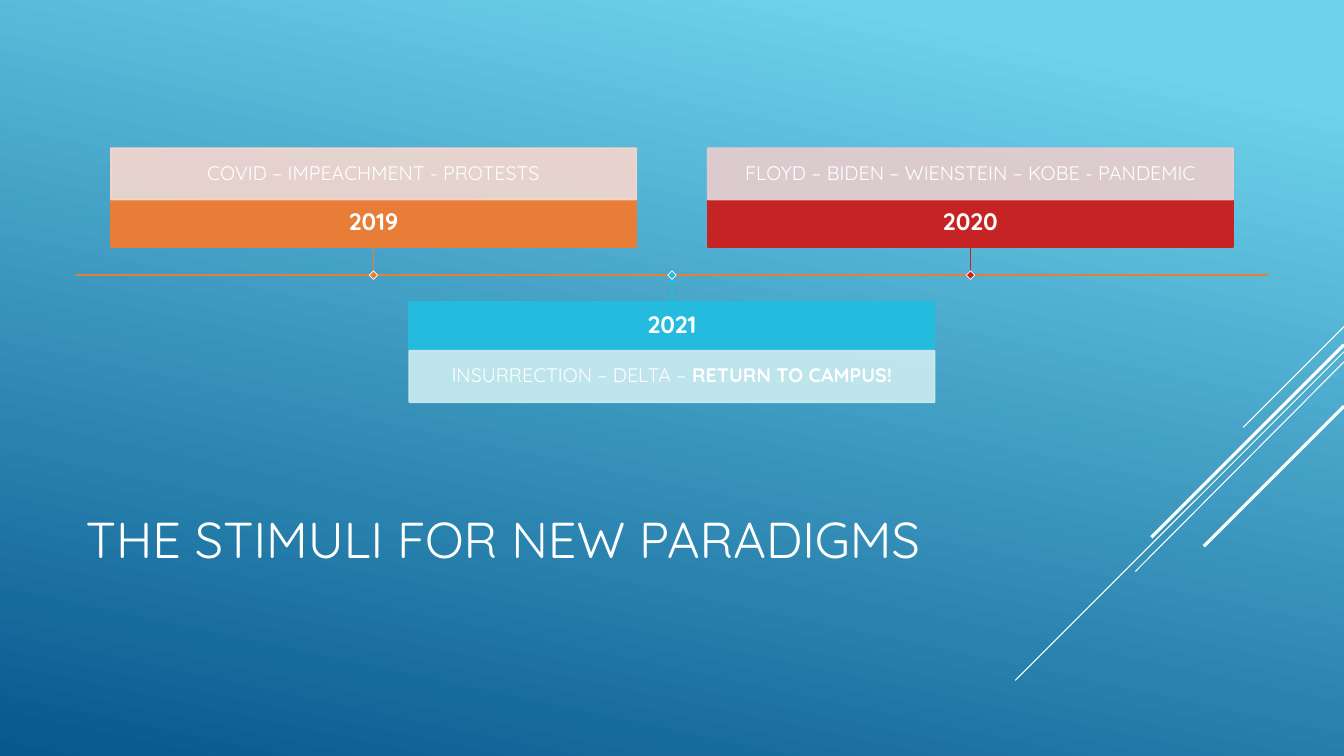
"""Build a timeline slide with three years and their events."""
from lxml import etree
from pptx import Presentation
from pptx.dml.color import RGBColor
from pptx.enum.shapes import MSO_CONNECTOR, MSO_SHAPE
from pptx.enum.text import MSO_ANCHOR, PP_ALIGN
from pptx.oxml.ns import qn
from pptx.util import Inches, Pt

STRAIGHT = MSO_CONNECTOR.STRAIGHT
RECTANGLE = MSO_SHAPE.RECTANGLE
MIDDLE = MSO_ANCHOR.MIDDLE
LEFT, CENTER = PP_ALIGN.LEFT, PP_ALIGN.CENTER

BOX_LEFT, BOX_STEP, BOX_WIDTH = 1.1, 2.96, 5.21
YEAR_HEIGHT, EVENTS_HEIGHT = 0.47, 0.51
AXIS_Y, MARKER_SIZE = 2.73, 0.06
ORANGE, CYAN, RED = "E87D37", "25BBDF", "C62324"

PERIODS = [
    ("2019", [("COVID – IMPEACHMENT - PROTESTS", False)], ORANGE, "F6D7CE", True),
    ("2021", [("INSURRECTION – DELTA – ", False), ("RETURN TO CAMPUS!", True)],
     CYAN, "CDEDF1", False),
    ("2020", [("FLOYD – BIDEN – WIENSTEIN – KOBE - PANDEMIC", False)],
     RED, "EACDCD", True),
]
RAYS = [
    (3.24, 12.33, 4.24, 0.75),
    (3.49, 10.07, 6.75, 0.75),
    (3.59, 11.26, 5.67, 0.75),
    (3.42, 11.42, 5.33, 2.25),
    (4.03, 11.94, 5.42, 2.25),
]


def color(value):
    """Turn a hex string into a colour."""
    return RGBColor.from_string(value)


def write(shape, runs, size, align=CENTER, inset=0.1, spacing=0.9):
    """Write (text, bold) runs as the only paragraph of a shape."""
    frame = shape.text_frame
    frame.word_wrap = True
    frame.vertical_anchor = MIDDLE
    frame.margin_left = frame.margin_right = Inches(inset)
    frame.margin_top = frame.margin_bottom = Inches(min(inset, 0.15))
    paragraph = frame.paragraphs[0]
    paragraph.alignment = align
    paragraph.line_spacing = spacing
    for text, bold in runs:
        run = paragraph.add_run()
        run.text = text
        run.font.name = SlideBuilder.font
        run.font.size = Pt(size)
        run.font.bold = bold
        run.font.color.rgb = color(SlideBuilder.ink)


class SlideBuilder:
    """Hold the style and the current slide."""

    font = "Quicksand"
    ink = "FFFFFF"

    def __init__(self, presentation):
        """Add a title-only slide to the presentation."""
        self.slide = presentation.slides.add_slide(presentation.slide_layouts[5])

    def background(self, start, end, angle):
        """Fill the background with a linear gradient."""
        fill = self.slide.background.fill
        fill.gradient()
        fill.gradient_angle = angle
        for stop, (position, value) in zip(fill.gradient_stops, (start, end)):
            stop.position = position
            stop.color.rgb = color(value)

    def title(self, text, left, top, width, height):
        """Place and format the title."""
        shape = self.slide.shapes.title
        shape.left, shape.top = Inches(left), Inches(top)
        shape.width, shape.height = Inches(width), Inches(height)
        write(shape, [(text, False)], 36, align=LEFT)

    def line(self, start, end, value, width):
        """Draw a straight line between two points."""
        points = [Inches(length) for length in (*start, *end)]
        connector = self.slide.shapes.add_connector(STRAIGHT, *points)
        connector.line.color.rgb = color(value)
        connector.line.width = Pt(width)
        etree.SubElement(connector._element.spPr, qn("a:effectLst"))

    def rectangle(self, box, fill, outline, width=1.25, opacity=100):
        """Draw a rectangle at left, top, width, height."""
        shape = self.slide.shapes.add_shape(RECTANGLE, *map(Inches, box))
        shape.shadow.inherit = False
        shape.fill.solid()
        shape.fill.fore_color.rgb = color(fill)
        shape.line.color.rgb = color(outline)
        shape.line.width = Pt(width)
        if opacity < 100:
            for element in shape._element.spPr.iter(qn("a:srgbClr")):
                etree.SubElement(element, qn("a:alpha"), val=str(opacity * 1000))
        return shape

    def marker(self, x, y, fill):
        """Draw a small diamond centred on a point."""
        half = MARKER_SIZE / 2
        box = (x - half, y - half, MARKER_SIZE, MARKER_SIZE)
        self.rectangle(box, fill, self.ink, width=0.5).rotation = 45

    def period(self, left, year, events, strong, pale, above):
        """Draw a year with its events above or below the axis."""
        year_top, events_top, edge = (1.98, 1.47, 2.45) if above else (3, 3.48, 3)
        center = left + BOX_WIDTH / 2
        year_box = self.rectangle(
            (left, year_top, BOX_WIDTH, YEAR_HEIGHT), strong, strong)
        write(year_box, [(year, True)], 17, inset=0.09)
        events_box = self.rectangle(
            (left, events_top, BOX_WIDTH, EVENTS_HEIGHT), pale, pale, opacity=90)
        write(events_box, events, 14, inset=0.15)
        self.line((center, edge), (center, AXIS_Y), strong, 0.75)
        self.marker(center, AXIS_Y, strong)


def main():
    """Build and save the slide."""
    presentation = Presentation()
    presentation.slide_width = Inches(13.33)
    presentation.slide_height = Inches(7.5)
    builder = SlideBuilder(presentation)
    builder.background((0.1, "6ED2EB"), (1, "06588E"), 258)
    for start_y, end_x, end_y, width in RAYS:
        builder.line((13.33, start_y), (end_x, end_y), builder.ink, width)
    builder.title("THE STIMULI FOR NEW PARADIGMS", 0.75, 4.91, 9.33, 0.93)
    builder.line((0.75, AXIS_Y), (12.58, AXIS_Y), ORANGE, 1.25)
    for index, period in enumerate(PERIODS):
        builder.period(BOX_LEFT + index * BOX_STEP, *period)
    presentation.save("out.pptx")


if __name__ == "__main__":
    main()
